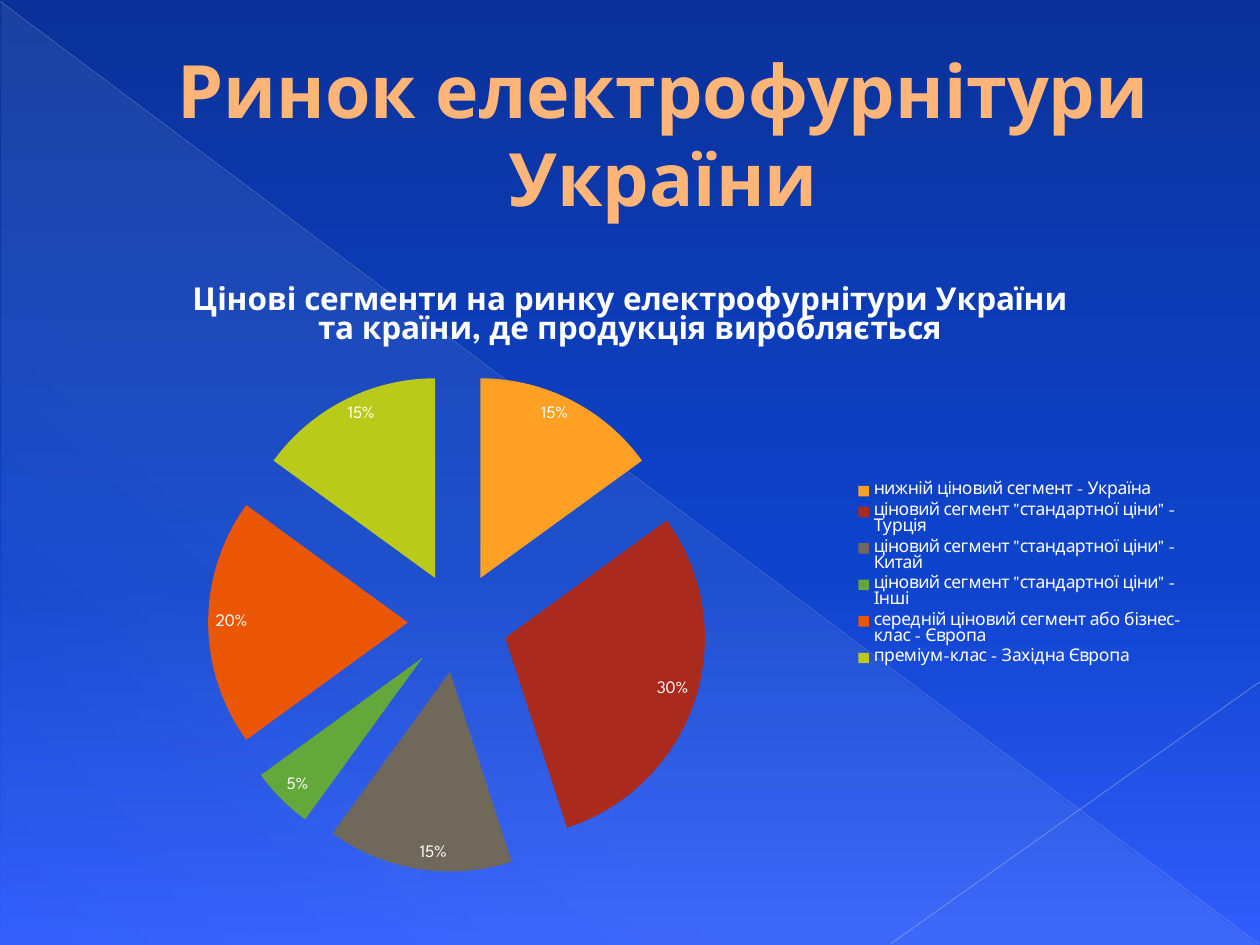
from lxml import etree
from pptx import Presentation
from pptx import util as u
from pptx.chart.data import CategoryChartData
from pptx.dml.color import RGBColor
from pptx.enum import chart as charts, shapes, text
from pptx.oxml import parse_xml
from pptx.oxml.ns import nsdecls, qn

FONT = "League Spartan"
COLORS = {
    "sky_top": "0A329A", "sky_mid": "0E43CC", "sky_low": "315DFC",
    "veil": "CCDDEA", "long_line": "ADB6DC", "short_line": "B7BEDF",
    "heading": "FFB577", "heading_edge": "AF6F18", "white": "FFFFFF",
}
CHART_TITLE = ("Цінові сегменти на ринку електрофурнітури України "
               "та країни, де продукція виробляється")
# Category, share in percent, slice colour
SEGMENTS = [
    ("нижній ціновий сегмент - Україна", 15, "FDA023"),
    ('ціновий сегмент "стандартної ціни" - Турція', 30, "AA2B1E"),
    ('ціновий сегмент "стандартної ціни" - Китай', 15, "71685C"),
    ('ціновий сегмент "стандартної ціни" - Інші', 5, "64A73B"),
    ("середній ціновий сегмент або бізнес-клас - Європа", 20, "EB5605"),
    ("преміум-клас - Західна Європа", 15, "B9CA1A"),
]


def rgb(name):
    return RGBColor.from_string(COLORS[name])


def gradient(stops, angle):
    """Gradient fill from (position %, colour name, opacity %) stops."""
    marks = "".join(
        f'<a:gs pos="{pos * 1000}"><a:srgbClr val="{COLORS[name]}">'
        f'<a:alpha val="{opacity * 1000}"/></a:srgbClr></a:gs>'
        for pos, name, opacity in stops)
    return parse_xml(f'<a:gradFill {nsdecls("a")} rotWithShape="1"><a:gsLst>{marks}</a:gsLst>'
                     f'<a:lin ang="{angle * 60000}" scaled="0"/></a:gradFill>')


def swap_gradient(fill, parent, stops, angle):
    fill.gradient()
    old = parent.find(qn("a:gradFill"))
    parent.replace(old, gradient(stops, angle))


def add_veil(page):
    veil = page.shapes.add_shape(
        shapes.MSO_SHAPE.RIGHT_TRIANGLE,
        u.Inches(0.01), u.Inches(0.02), u.Inches(9.98), u.Inches(7.48))
    veil.shadow.inherit = False
    veil.line.fill.background()
    swap_gradient(veil.fill, veil._element.spPr,
                  [(0, "veil", 10), (70, "veil", 8), (100, "veil", 1)], 133)


def add_line(page, start, end, color, width, opacity):
    line = page.shapes.add_connector(
        shapes.MSO_CONNECTOR.STRAIGHT, *(u.Inches(n) for n in start + end))
    line.line.color.rgb = rgb(color)
    line.line.width = u.Pt(width)
    props = line._element.spPr
    tint = props.find(".//" + qn("a:srgbClr"))
    etree.SubElement(tint, qn("a:alpha")).set("val", str(opacity * 1000))
    etree.SubElement(props, qn("a:effectLst"))


def add_heading(page, words):
    box = page.shapes.add_textbox(
        u.Inches(0.5), u.Inches(0.29), u.Inches(9), u.Inches(1.53))
    frame = box.text_frame
    frame.word_wrap = True
    frame.vertical_anchor = text.MSO_ANCHOR.MIDDLE
    para = frame.paragraphs[0]
    para.alignment = text.PP_ALIGN.CENTER
    para._p.get_or_add_pPr().set("marL", str(u.Inches(0.53)))
    span = para.add_run()
    span.text = words
    style_font(span.font, 42, "heading", True)
    span.font._element.insert(0, parse_xml(
        f'<a:ln {nsdecls("a")} w="{u.Pt(0.5)}"><a:solidFill>'
        f'<a:srgbClr val="{COLORS["heading_edge"]}"/></a:solidFill></a:ln>'))


def style_font(font, size, color, bold=False):
    font.name = FONT
    font.size = u.Pt(size)
    font.bold = bold
    font.color.rgb = rgb(color)


def add_pie(page):
    data = CategoryChartData()
    data.categories = [name for name, _, _ in SEGMENTS]
    data.add_series(CHART_TITLE, [share for _, share, _ in SEGMENTS])
    chart = page.shapes.add_chart(
        charts.XL_CHART_TYPE.PIE, u.Inches(0.5), u.Inches(2.06),
        u.Inches(9), u.Inches(5), data).chart
    style_font(chart.font, 10, "white")

    # Title and legend
    chart.has_title = True
    span = chart.chart_title.text_frame.paragraphs[0].add_run()
    span.text = CHART_TITLE
    style_font(span.font, 18, "white", True)
    chart.has_legend = True
    chart.legend.position = charts.XL_LEGEND_POSITION.RIGHT
    chart.legend.include_in_layout = False

    # Exploded slices
    plot = chart.plots[0]
    plot.vary_by_categories = True
    series = plot.series[0]
    for index, (_, _, color) in enumerate(SEGMENTS):
        fill = series.points[index].format.fill
        fill.solid()
        fill.fore_color.rgb = RGBColor.from_string(color)
    first_point = series._element.find(qn("c:dPt"))
    first_point.addprevious(parse_xml(f'<c:explosion {nsdecls("c")} val="25"/>'))
    for point in series._element.findall(qn("c:dPt")):
        point.find(qn("c:spPr")).addprevious(
            parse_xml(f'<c:explosion {nsdecls("c")} val="25"/>'))

    # Percentage labels
    plot.has_data_labels = True
    labels = plot.data_labels
    labels.show_percentage = True
    labels.show_value = False
    labels.number_format = "0%"
    labels.number_format_is_linked = False
    labels.position = charts.XL_LABEL_POSITION.INSIDE_END
    style_font(labels.font, 10, "white")


def main():
    deck = Presentation()
    deck.slide_width, deck.slide_height = u.Inches(10), u.Inches(7.5)
    page = deck.slides.add_slide(deck.slide_layouts[6])

    # Backdrop
    fill = page.background.fill
    swap_gradient(fill, page._element.cSld.find(".//" + qn("p:bgPr")),
                  [(0, "sky_top", 100), (60, "sky_mid", 100), (100, "sky_low", 100)], 90)
    add_veil(page)
    add_line(page, (0, 0.01), (9.99, 7.49), "long_line", 0.39, 35)
    add_line(page, (10, 5.41), (7.07, 7.49), "short_line", 0.47, 45)

    # Content
    add_heading(page, "Ринок електрофурнітури України")
    add_pie(page)
    deck.save("out.pptx")


if __name__ == "__main__":
    main()
